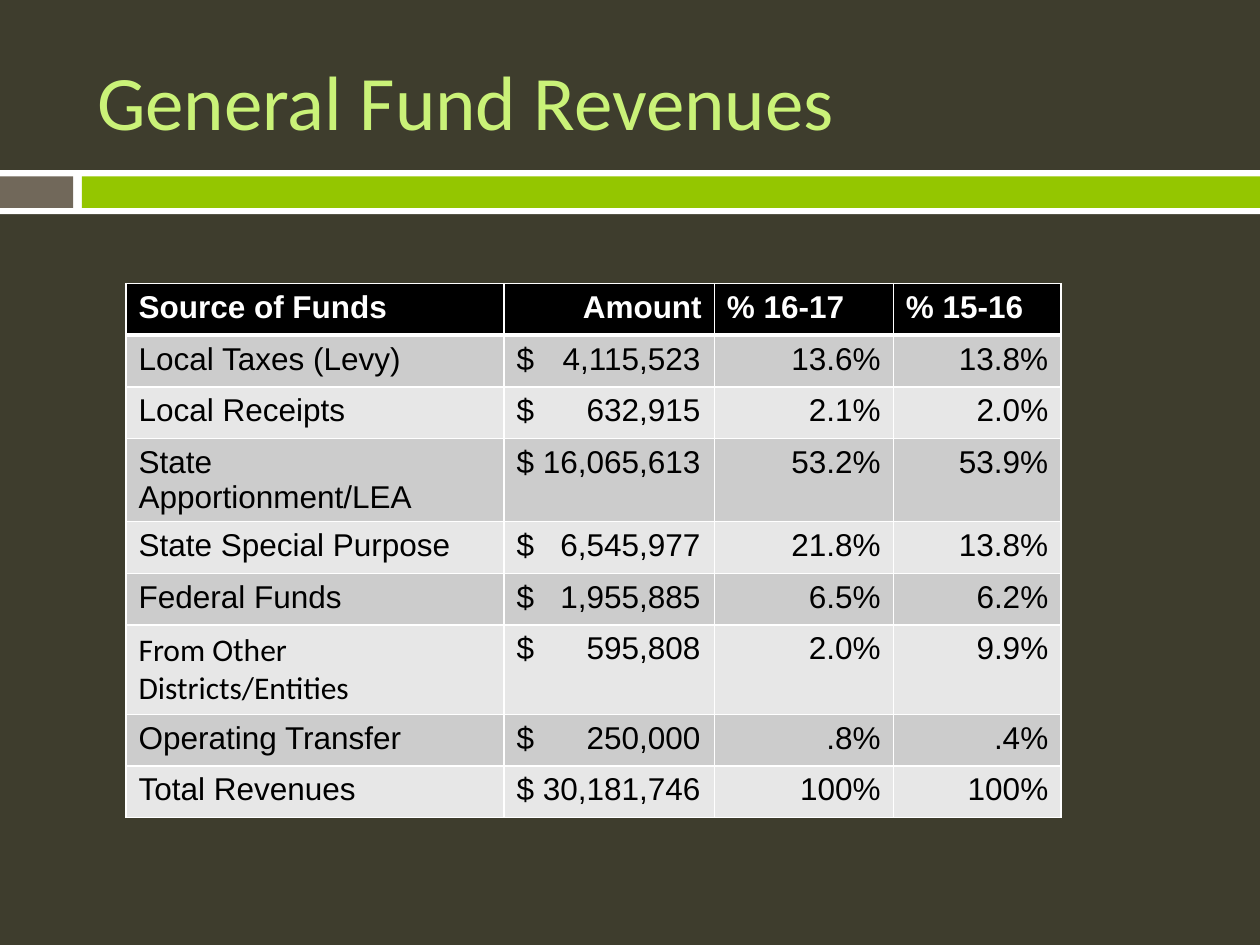
import pptx
import pptx.util
import pptx.dml.color
import pptx.enum.shapes
import pptx.enum.text
import pptx.oxml.ns
import lxml.etree

Inches = pptx.util.Inches
Pt = pptx.util.Pt
Align = pptx.enum.text.PP_ALIGN

BANDS = [
    (0, 1.35, 10, 0.35, "FFFFFF"),
    (0, 1.4, 0.58, 0.25, "71685A"),
    (0.65, 1.4, 9.35, 0.25, "94C600"),
]
COLUMN_WIDTHS = [3, 1.67, 1.42, 1.33]
ROW_HEIGHT = 0.41
AMOUNT_TAB = 1.46
HEADER = ["Source of Funds", "Amount", "% 16-17", "% 15-16"]
REVENUES = [
    ["Local Taxes (Levy)", "4,115,523", "13.6%", "13.8%"],
    ["Local Receipts", "632,915", "2.1%", "2.0%"],
    ["State Apportionment/LEA", "16,065,613", "53.2%", "53.9%"],
    ["State Special Purpose", "6,545,977", "21.8%", "13.8%"],
    ["Federal Funds", "1,955,885", "6.5%", "6.2%"],
    ["From Other Districts/Entities", "595,808", "2.0%", "9.9%"],
    ["Operating Transfer", "250,000", ".8%", ".4%"],
    ["Total Revenues", "30,181,746", "100%", "100%"],
]
CALIBRI_LABEL = "From Other Districts/Entities"


def color(value):
    return pptx.dml.color.RGBColor.from_string(value)


def set_fill(fill, value):
    fill.solid()
    fill.fore_color.rgb = color(value)


def write_text(para, text, font_color, **formats):
    span = para.add_run()
    span.text = text
    span.font.color.rgb = color(font_color)
    for name, value in formats.items():
        setattr(span.font, name, value)


def add_child(parent, tag, **attributes):
    child = lxml.etree.SubElement(parent, pptx.oxml.ns.qn(tag))
    for name, value in attributes.items():
        child.set(name, str(value))
    return child


def add_band(page, left, top, width, height, fill):
    band = page.shapes.add_shape(
        pptx.enum.shapes.MSO_SHAPE.RECTANGLE,
        Inches(left), Inches(top), Inches(width), Inches(height))
    band.shadow.inherit = False
    set_fill(band.fill, fill)
    band.line.fill.background()


def fill_title(page, text):
    title = page.shapes.title
    place = {"left": 0.67, "top": 0.25, "width": 8.92, "height": 1.08}
    for name, value in place.items():
        setattr(title, name, Inches(value))
    frame = title.text_frame
    frame.auto_size = pptx.enum.text.MSO_AUTO_SIZE.NONE
    frame.vertical_anchor = pptx.enum.text.MSO_ANCHOR.MIDDLE
    para = frame.paragraphs[0]
    para.alignment = Align.LEFT
    write_text(para, text, "CAF278", name="Calibri", size=Pt(44))


def set_borders(cell, top=1, bottom=1):
    """Draw white cell borders; widths are in points."""
    properties = cell._tc.get_or_add_tcPr()
    widths = {"a:lnL": 1, "a:lnR": 1, "a:lnT": top, "a:lnB": bottom}
    for tag, width in widths.items():
        line = add_child(properties, tag, w=Pt(width))
        add_child(add_child(line, "a:solidFill"), "a:srgbClr", val="FFFFFF")


def add_right_tab(para, position):
    tabs = add_child(para._p.get_or_add_pPr(), "a:tabLst")
    add_child(tabs, "a:tab", pos=Inches(position), algn="r")


def fill_header_cell(cell, text):
    set_borders(cell, bottom=3)
    set_fill(cell.fill, "000000")
    para = cell.text_frame.paragraphs[0]
    para.alignment = Align.RIGHT if text == "Amount" else Align.LEFT
    write_text(para, text, "FFFFFF", name="Arial", size=Pt(18), bold=True)


def fill_body_cell(cell, text, row, column):
    set_borders(cell, top=3 if row == 1 else 1)
    set_fill(cell.fill, "CCCCCC" if row % 2 else "E7E7E7")
    para = cell.text_frame.paragraphs[0]
    para.alignment = Align.RIGHT if column > 1 else Align.LEFT
    if column == 1:
        add_right_tab(para, AMOUNT_TAB)
        text = "$\t" + text
    font = "Calibri" if text == CALIBRI_LABEL else "Arial"
    write_text(para, text, "000000", name=font, size=Pt(18), bold=False)


def add_revenue_table(page):
    row_count = len(REVENUES) + 1
    table = page.shapes.add_table(
        row_count, len(HEADER), Inches(1), Inches(2.25),
        Inches(sum(COLUMN_WIDTHS)), Inches(ROW_HEIGHT * row_count)).table
    table.horz_banding = False
    for column, width in zip(table.columns, COLUMN_WIDTHS):
        column.width = Inches(width)
    for row in table.rows:
        row.height = Inches(ROW_HEIGHT)
    for column, text in enumerate(HEADER):
        fill_header_cell(table.cell(0, column), text)
    for row, values in enumerate(REVENUES, start=1):
        for column, text in enumerate(values):
            fill_body_cell(table.cell(row, column), text, row, column)


def main():
    deck = pptx.Presentation()
    deck.slide_width, deck.slide_height = Inches(10), Inches(7.5)
    page = deck.slides.add_slide(deck.slide_layouts.get_by_name("Title Only"))
    set_fill(page.background.fill, "3E3D2D")
    for band in BANDS:
        add_band(page, *band)
    fill_title(page, "General Fund Revenues")
    add_revenue_table(page)
    deck.save("out.pptx")


if __name__ == "__main__":
    main()
